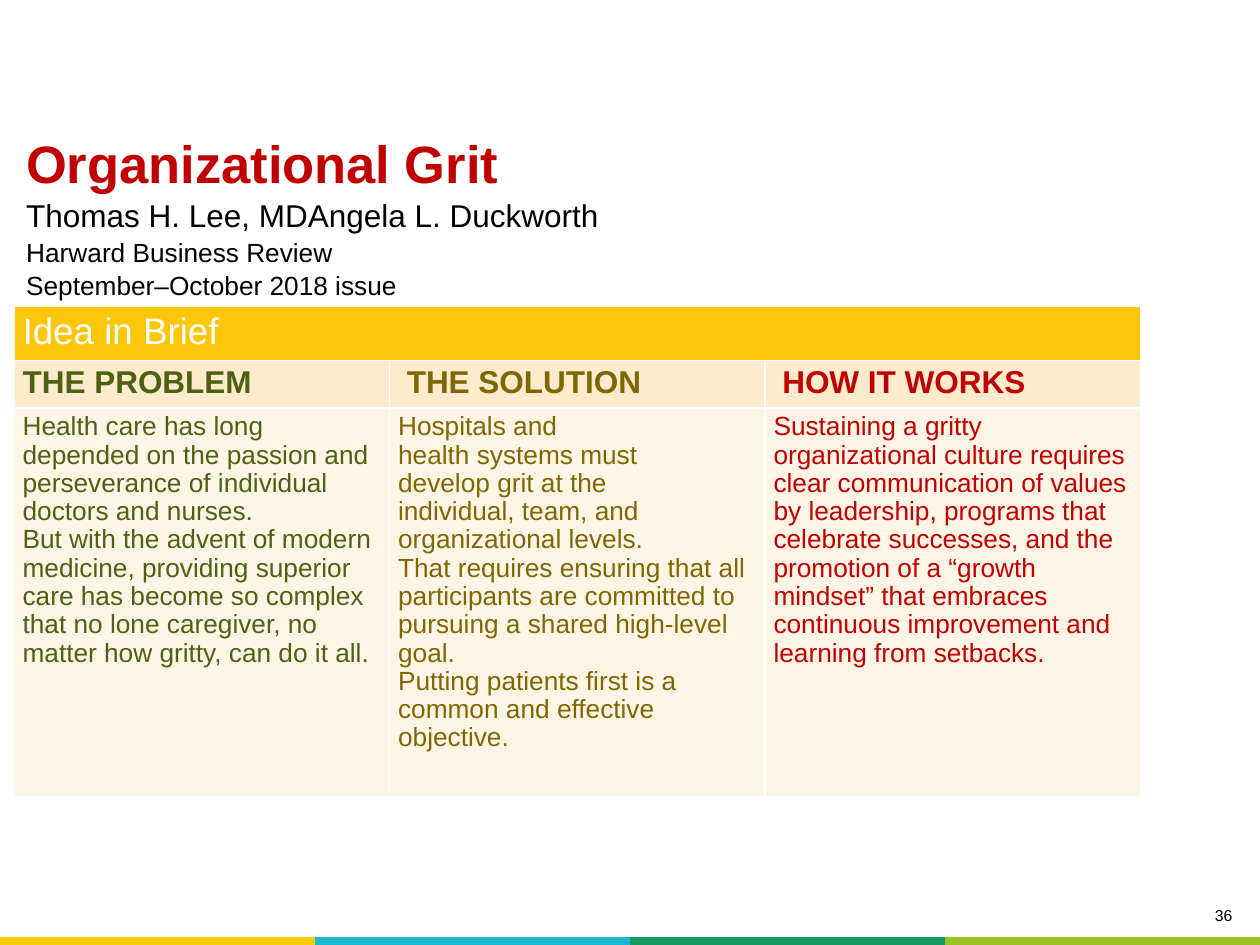
import pptx
import pptx.util
import pptx.dml.color
import pptx.enum.text
import pptx.oxml
from pptx.util import Inches

presentation = pptx.Presentation()
presentation.slide_width = Inches(10)
presentation.slide_height = Inches(7.5)
slide = presentation.slides.add_slide(presentation.slide_layouts[6])


def color(value):
    return pptx.dml.color.RGBColor.from_string(value)


def write(frame, paragraphs, size=15, fill="000000", bold=False, spacing=1.0,
          align=pptx.enum.text.PP_ALIGN.LEFT):
    """Fill a text frame; each paragraph is a string or a list of (text, size, color, bold)."""
    frame.word_wrap = True
    for index, content in enumerate(paragraphs):
        paragraph = frame.paragraphs[0] if index == 0 else frame.add_paragraph()
        paragraph.alignment = align
        paragraph.line_spacing = spacing
        lines = [(content, size, fill, bold)] if isinstance(content, str) else content
        for number, (text, line_size, line_color, line_bold) in enumerate(lines):
            if number:
                paragraph.add_line_break()
            run = paragraph.add_run()
            run.text = text
            run.font.name = "Arial"
            run.font.size = pptx.util.Pt(line_size)
            run.font.bold = line_bold
            run.font.color.rgb = color(line_color)


# Four-colour strip along the bottom edge
strip_colors = ["FFCC00", "1CB8CF", "159961", "98C222"]
strip = slide.shapes.add_table(1, 4, Inches(0), Inches(7.44), Inches(10), Inches(0.06)).table
for column, strip_color in enumerate(strip_colors):
    cell = strip.cell(0, column)
    cell.margin_top = cell.margin_bottom = 0
    cell.fill.solid()
    cell.fill.fore_color.rgb = color(strip_color)
    # White borders of the default style are switched off
    for side in ("a:lnL", "a:lnR", "a:lnT", "a:lnB"):
        border = pptx.oxml.parse_xml(
            f'<{side} xmlns:a="http://schemas.openxmlformats.org/drawingml/2006/main" w="0">'
            f'<a:noFill/></{side}>')
        cell._tc.tcPr.insert(len(cell._tc.tcPr) - 1, border)

# Page number
number_box = slide.shapes.add_textbox(Inches(7.91), Inches(7.14), Inches(1.97), Inches(0.31))
write(number_box.text_frame, ["36"], size=9, align=pptx.enum.text.PP_ALIGN.RIGHT)

# Title with authors and issue
title_box = slide.shapes.add_textbox(Inches(0.11), Inches(1.08), Inches(8.94), Inches(1.24))
title_frame = title_box.text_frame
title_frame.vertical_anchor = pptx.enum.text.MSO_ANCHOR.MIDDLE
title_frame.margin_top = title_frame.margin_bottom = Inches(0.1)
write(title_frame, [[
    ("Organizational Grit", 30, "C00000", True),
    ("Thomas H. Lee, MDAngela L. Duckworth", 18, "000000", False),
    ("Harward Business Review", 15, "000000", False),
    ("September–October 2018 issue", 15, "000000", False),
]], spacing=1.06)

# Idea in Brief table: heading, text colour, paragraphs for each column
columns = [
    ("THE PROBLEM", "4C6111", [
        "Health care has long depended on the passion and perseverance of individual "
        "doctors and nurses.",
        "But with the advent of modern medicine, providing superior care has become so "
        "complex that no lone caregiver, no matter how gritty, can do it all."]),
    (" THE SOLUTION", "806600", [
        "Hospitals and", "health systems must", "develop grit at the",
        "individual, team, and", "organizational levels.",
        "That requires ensuring that all participants are committed to pursuing a shared "
        "high-level goal.",
        "Putting patients first is a common and effective objective."]),
    (" HOW IT WORKS", "C00000", [
        "Sustaining a gritty organizational culture requires clear communication of values "
        "by leadership, programs that celebrate successes, and the promotion of a “growth "
        "mindset” that embraces continuous improvement and learning from setbacks."]),
]
row_heights = [0.42, 0.38, 3.08]
row_fills = ["FDC609", "FEEACC", "FFF5E7"]
brief = slide.shapes.add_table(3, 3, Inches(0.11), Inches(2.43), Inches(8.94), Inches(3.88)).table
for row, (height, row_fill) in enumerate(zip(row_heights, row_fills)):
    brief.rows[row].height = Inches(height)
    for cell in brief.rows[row].cells:
        cell.margin_left = cell.margin_right = Inches(0.07)
        cell.margin_top = cell.margin_bottom = Inches(0.04)
        cell.fill.solid()
        cell.fill.fore_color.rgb = color(row_fill)
brief.cell(0, 0).merge(brief.cell(0, 2))
write(brief.cell(0, 0).text_frame, ["Idea in Brief"], size=21, fill="FFFFFF")
for column, (heading, text_color, paragraphs) in enumerate(columns):
    write(brief.cell(1, column).text_frame, [heading], size=18, fill=text_color, bold=True)
    write(brief.cell(2, column).text_frame, paragraphs, fill=text_color, spacing=0.97)

presentation.save("out.pptx")
